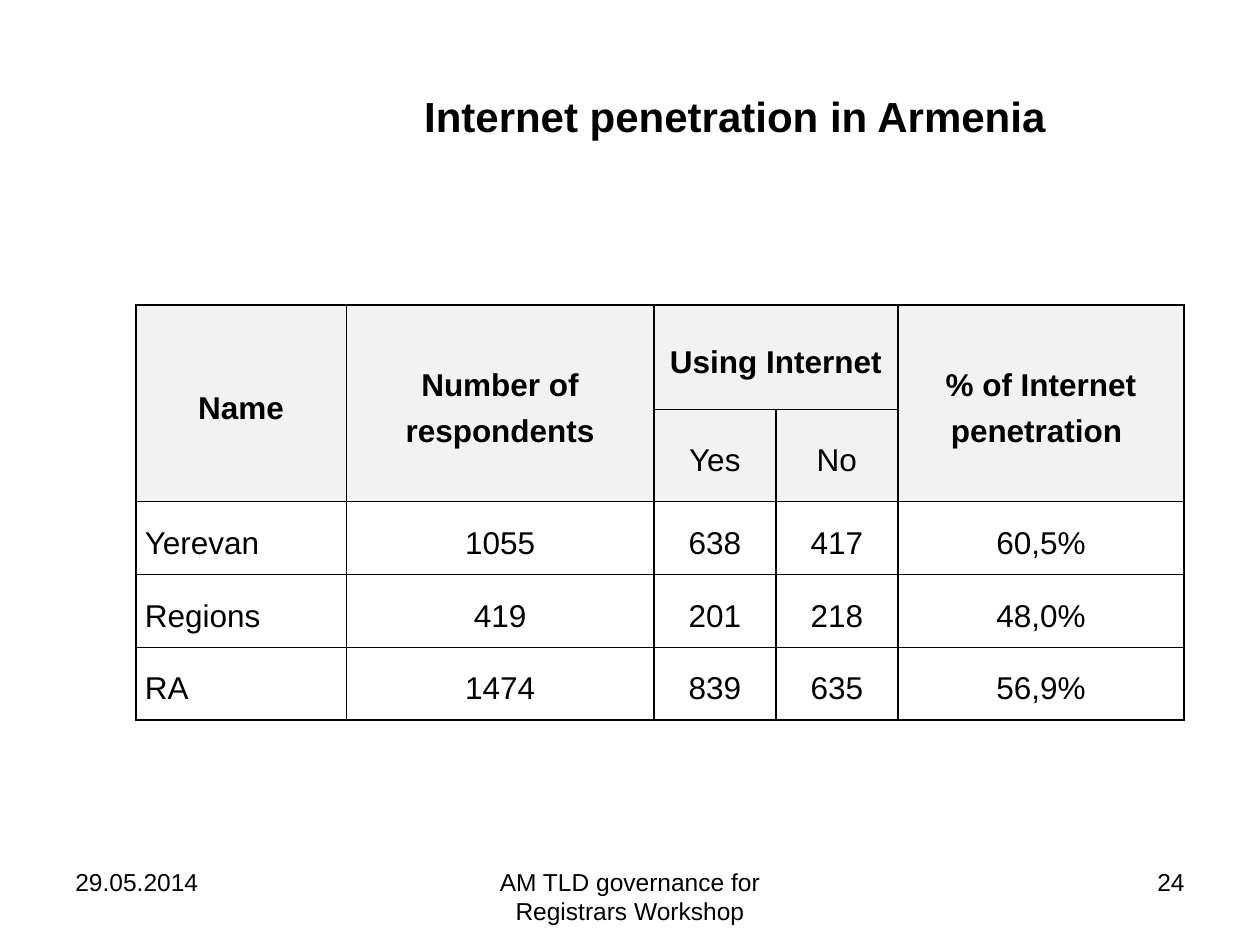
from lxml.etree import SubElement
from pptx import Presentation
from pptx.dml.color import RGBColor
from pptx.enum.text import MSO_ANCHOR, PP_ALIGN
from pptx.oxml.ns import qn
from pptx.util import Cm, Pt

BLACK = RGBColor(0, 0, 0)
GREY = RGBColor(0xF2, 0xF2, 0xF2)
LEFT, MID, RIGHT = PP_ALIGN.LEFT, PP_ALIGN.CENTER, PP_ALIGN.RIGHT
COLS = (4.24, 6.2, 2.46, 2.46, 5.77)
ROWS = (2.11, 1.57, 1.47, 1.47, 1.47)
HEAD = 2
SPANS = ((0, 0, 1, 0), (0, 1, 1, 1), (0, 2, 0, 3), (0, 4, 1, 4))
DATA = (
    ("Name", "Number of respondents", "Using Internet", "", "% of Internet penetration "),
    ("", "", "Yes", "No", ""),
    ("Yerevan", "1055", "638", "417", "60,5%"),
    ("Regions", "419", "201", "218", "48,0%"),
    ("RA", "1474", "839", "635", "56,9%"),
)


def write(frame, text, size, align, bold=False):
    """Put one styled run into the first paragraph and return the paragraph."""
    para = frame.paragraphs[0]
    para.alignment = align
    run = para.add_run()
    run.text = text
    font = run.font
    font.name, font.size, font.bold = "Arial", Pt(size), bold
    font.color.rgb = BLACK
    return para


def add_text(slide, text, left, top, width, height, size, align, bold=False):
    """Add a wrapped text box; bold text is centred vertically."""
    box = slide.shapes.add_textbox(Cm(left), Cm(top), Cm(width), Cm(height))
    frame = box.text_frame
    frame.word_wrap = True
    frame.vertical_anchor = MSO_ANCHOR.MIDDLE if bold else MSO_ANCHOR.TOP
    write(frame, text, size, align, bold)


def rule(cell):
    """Draw thin black borders on all four sides of a cell."""
    props = cell._tc.get_or_add_tcPr()
    for side in ("lnL", "lnR", "lnT", "lnB"):
        line = SubElement(props, qn(f"a:{side}"), w=str(Pt(1)))
        fill = SubElement(line, qn("a:solidFill"))
        SubElement(fill, qn("a:srgbClr"), val=str(BLACK))


def style(cell, head):
    """Set the borders, fill, margins and anchor of a cell."""
    rule(cell)
    if head:
        cell.fill.solid()
        cell.fill.fore_color.rgb = GREY
    else:
        cell.fill.background()
    cell.margin_left = cell.margin_right = Cm(0.18)
    cell.margin_top = cell.margin_bottom = Cm(0)
    cell.vertical_anchor = MSO_ANCHOR.MIDDLE


def add_grid(slide):
    """Add the table of respondents with its two-row heading."""
    grid = slide.shapes.add_table(
        len(ROWS), len(COLS), Cm(2.74), Cm(6.15), Cm(sum(COLS)), Cm(sum(ROWS))
    ).table
    for col, width in zip(grid.columns, COLS):
        col.width = Cm(width)
    for row, height in zip(grid.rows, ROWS):
        row.height = Cm(height)
    for top, left, low, right in SPANS:
        grid.cell(top, left).merge(grid.cell(low, right))
    for r, texts in enumerate(DATA):
        for c, text in enumerate(texts):
            cell = grid.cell(r, c)
            style(cell, r < HEAD)
            if text:
                align = LEFT if r >= HEAD and c == 0 else MID
                para = write(cell.text_frame, text, 18, align, r == 0)
                para.line_spacing = 1.3


def main():
    """Build and save the slide."""
    deck = Presentation()
    deck.slide_width, deck.slide_height = Cm(25.4), Cm(19.05)
    slide = deck.slides.add_slide(deck.slide_layouts[6])
    add_grid(slide)
    for text, left, width, align in (
        ("29.05.2014", 1.27, 5.93, LEFT),
        ("AM TLD governance for Registrars Workshop", 8.68, 8.04, MID),
        ("24", 18.2, 5.93, RIGHT),
    ):
        add_text(slide, text, left, 17.35, width, 1.32, 14, align)
    add_text(slide, "Internet penetration in Armenia", 5.5, 1.7, 18.63, 1.28, 24, MID, True)
    deck.save("out.pptx")


if __name__ == "__main__":
    main()
